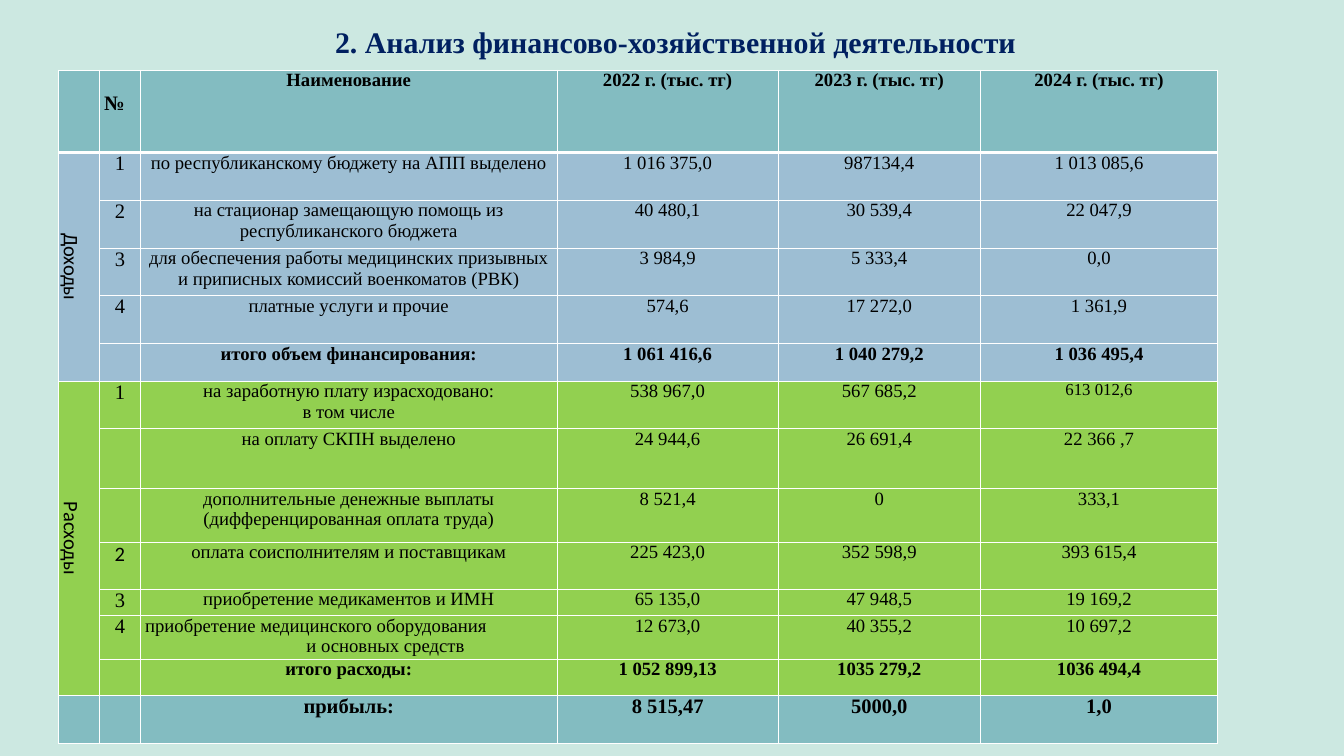
import pptx
import pptx.util
import pptx.dml.color
import pptx.enum.text
import pptx.oxml.ns
from lxml import etree

Inches = pptx.util.Inches
Pt = pptx.util.Pt
RGBColor = pptx.dml.color.RGBColor
Align = pptx.enum.text.PP_ALIGN
Anchor = pptx.enum.text.MSO_ANCHOR
qn = pptx.oxml.ns.qn

MINT = RGBColor(0xCC, 0xE8, 0xE1)
NAVY = RGBColor(0x00, 0x20, 0x60)
BLACK = RGBColor(0x00, 0x00, 0x00)
WHITE = RGBColor(0xFF, 0xFF, 0xFF)
TEAL = RGBColor(0x83, 0xBC, 0xC1)
BLUE = RGBColor(0x9D, 0xBE, 0xD3)
GREEN = RGBColor(0x92, 0xD0, 0x50)

SERIF = "Times New Roman"
SANS = "Calibri"

COLUMN_WIDTHS = [0.61, 0.61, 6.2, 3.29, 3.01, 3.53]
ROW_HEIGHTS = [1.23, 0.71, 0.71, 0.71, 0.71, 0.56, 0.71,
               0.89, 0.8, 0.7, 0.39, 0.65, 0.54, 0.71]

HEADER = ["№", "Наименование", "2022 г. (тыс. тг)", "2023 г. (тыс. тг)", "2024 г. (тыс. тг)"]
INCOME = [
    ["1", "по республиканскому бюджету на АПП выделено", "1 016 375,0", "987134,4", "1 013 085,6"],
    ["2", "на стационар замещающую помощь из республиканского бюджета",
     "40 480,1", "30 539,4", "22 047,9"],
    ["3", "для обеспечения работы медицинских призывных и приписных комиссий военкоматов (РВК)",
     "3 984,9", "5 333,4", "0,0"],
    ["4", "платные услуги и прочие", "574,6", "17 272,0", "1 361,9"],
    ["", "итого объем финансирования:", "1 061 416,6", "1 040 279,2", "1 036 495,4"],
]
EXPENSES = [
    ["1", "на заработную плату израсходовано:\nв том числе", "538 967,0", "567 685,2", "613 012,6"],
    ["", "на оплату СКПН выделено", "24 944,6", "26 691,4", "22 366 ,7"],
    ["", "дополнительные денежные выплаты (дифференцированная оплата труда)",
     "8 521,4", "0", "333,1"],
    ["2", "оплата соисполнителям и поставщикам", "225 423,0", "352 598,9", "393 615,4"],
    ["3", "приобретение медикаментов и ИМН", "65 135,0", "47 948,5", "19 169,2"],
    ["4", "приобретение медицинского оборудования\nи основных средств",
     "12 673,0", "40 355,2", "10 697,2"],
    ["", "итого расходы:", "1 052 899,13", "1035 279,2", "1036 494,4"],
]
PROFIT = ["", "прибыль:", "8 515,47", "5000,0", "1,0"]


def write(frame, text, size=20, font=SERIF, color=BLACK, bold=False, align=Align.CENTER):
    frame.text = text
    for paragraph in frame.paragraphs:
        paragraph.alignment = align
        for run in paragraph.runs:
            run.font.size = Pt(size)
            run.font.name = font
            run.font.bold = bold
            run.font.color.rgb = color


class SlideBuilder:
    def __init__(self, slide):
        self.slide = slide
        self.border_color = WHITE
        self.border_width = 1
        self.header_rule_width = 3
        self.cell_margin = Inches(0.07)

    def background(self, color):
        fill = self.slide.background.fill
        fill.solid()
        fill.fore_color.rgb = color

    def title(self, text, left, top, width, height):
        shape = self.slide.shapes.title
        shape.left, shape.top = Inches(left), Inches(top)
        shape.width, shape.height = Inches(width), Inches(height)
        frame = shape.text_frame
        frame.margin_left = frame.margin_right = frame.margin_top = frame.margin_bottom = 0
        frame.vertical_anchor = Anchor.MIDDLE
        write(frame, text, size=32, color=NAVY, bold=True)

    def table(self, left, top, column_widths, row_heights):
        shape = self.slide.shapes.add_table(
            len(row_heights), len(column_widths), Inches(left), Inches(top),
            Inches(sum(column_widths)), Inches(sum(row_heights)))
        table = shape.table
        for column, width in zip(table.columns, column_widths):
            column.width = Inches(width)
        for row, height in zip(table.rows, row_heights):
            row.height = Inches(height)
        return table

    def borders(self, cell, row):
        properties = cell._tc.get_or_add_tcPr()
        for side in "LRTB":
            under_header = (row, side) in ((0, "B"), (1, "T"))
            width = self.header_rule_width if under_header else self.border_width
            line = etree.SubElement(properties, qn(f"a:ln{side}"), w=str(Pt(width)))
            fill = etree.SubElement(line, qn("a:solidFill"))
            etree.SubElement(fill, qn("a:srgbClr"), val=str(self.border_color))

    def cell(self, table, row, column, text, color, **text_format):
        cell = table.cell(row, column)
        self.borders(cell, row)
        cell.fill.solid()
        cell.fill.fore_color.rgb = color
        cell.margin_left = cell.margin_right = self.cell_margin
        cell.margin_top = cell.margin_bottom = 0
        write(cell.text_frame, text, **text_format)
        return cell

    def row(self, table, row, values, color, bold=False, size=20):
        self.cell(table, row, 0, "", color)
        for column, text in enumerate(values, 1):
            text_size = 22 if column == 1 else size
            self.cell(table, row, column, text, color, size=text_size, bold=bold)

    def group(self, table, first_row, name, rows, color):
        last_row = first_row + len(rows) - 1
        for row, values in enumerate(rows, first_row):
            self.row(table, row, values, color, bold=row == last_row)
        label = table.cell(first_row, 0)
        label.merge(table.cell(last_row, 0))
        label._tc.get_or_add_tcPr().set("vert", "vert")
        write(label.text_frame, name, size=22, font=SANS)


def main():
    presentation = pptx.Presentation()
    presentation.slide_width = Inches(20)
    presentation.slide_height = Inches(11.25)
    builder = SlideBuilder(presentation.slides.add_slide(presentation.slide_layouts[5]))
    builder.background(MINT)
    builder.title("2. Анализ финансово-хозяйственной деятельности", 1.34, 0.19, 17.43, 0.85)

    table = builder.table(0.87, 1.04, COLUMN_WIDTHS, ROW_HEIGHTS)
    income_row = 1
    expenses_row = income_row + len(INCOME)
    profit_row = expenses_row + len(EXPENSES)
    builder.row(table, 0, HEADER, TEAL, bold=True)
    builder.group(table, income_row, "Доходы", INCOME, BLUE)
    builder.group(table, expenses_row, "Расходы", EXPENSES, GREEN)
    builder.row(table, profit_row, PROFIT, TEAL, bold=True, size=22)

    number_heading = table.cell(0, 1)
    number_heading.margin_top = Inches(0.34)
    number_heading.text_frame.paragraphs[0].alignment = Align.LEFT

    salary_2024 = table.cell(expenses_row, 5).text_frame
    write(salary_2024, salary_2024.text, size=18)
    contractors_number = table.cell(expenses_row + 3, 1).text_frame
    write(contractors_number, contractors_number.text, size=22, font=SANS)

    equipment = table.cell(expenses_row + 5, 2).text_frame
    write(equipment, equipment.text, align=Align.LEFT)
    equipment.paragraphs[1]._p.get_or_add_pPr().set("marL", str(Inches(2.4)))

    presentation.save("out.pptx")


if __name__ == "__main__":
    main()
